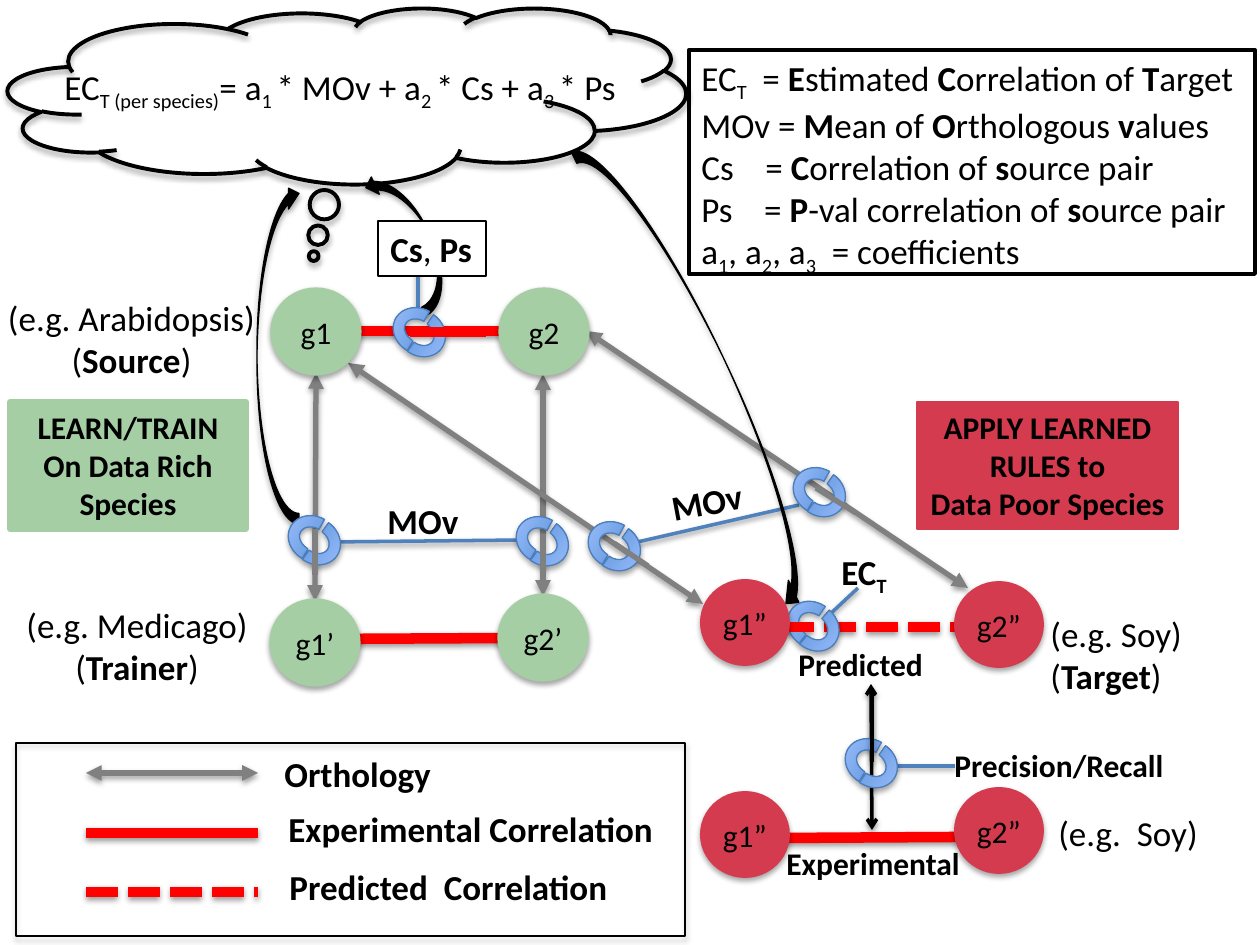
from lxml.etree import SubElement
from pptx import Presentation
from pptx.dml.color import RGBColor
from pptx.enum.dml import MSO_LINE
from pptx.enum.shapes import MSO_CONNECTOR, MSO_SHAPE
from pptx.enum.text import MSO_ANCHOR, MSO_AUTO_SIZE, PP_ALIGN
from pptx.oxml.ns import qn
from pptx.util import Pt

SCALE = 914400 / 126
GREEN, RED, BLACK, WHITE = "A5CEA5", "D53B4F", "000000", "FFFFFF"
ALIGN = {"l": PP_ALIGN.LEFT, "c": PP_ALIGN.CENTER}
NODE_W, NODE_H, RING_W, RING_H = 86, 83, 45, 52
NODE_LINES = {GREEN: 3, RED: 2.25}
LINKS = {
    "pointer": {"color": "4F81BD", "width": 2},
    "experimental": {"color": "FF0000", "width": 6},
    "predicted": {"color": "FF0000", "width": 6, "dash": MSO_LINE.SQUARE_DOT},
    "orthology": {"color": "808080", "width": 3, "head": "triangle"},
    "compare": {"color": BLACK, "width": 2, "head": "arrow"},
    "axis": {"color": BLACK, "width": 2.25},
    "red overlay": {"color": "FF0000", "width": 6, "shadow": False},
    "grey overlay": {"color": "808080", "width": 3, "shadow": False},
}

GLOSSARY = ["EC~T~  = ^E^stimated ^C^orrelation of ^T^arget",
            "MOv = ^M^ean of ^O^rthologous ^v^alues",
            "Cs    = ^C^orrelation of ^s^ource pair",
            "Ps    = ^P^-val correlation of ^s^ource pair",
            "a~1~, a~2~, a~3~  = coefficients"]
EQUATION = "EC~T (per species)~= a~1 ~* MOv + a~2 ~* Cs + a~3 ~* Ps "

ITEMS = [
    ("text", (-6, 290, 275, 97), ["(e.g. Arabidopsis)", "(^Source^)"], {"align": "c"}),
    ("link", "pointer", (895, 766, 955, 766)),
    ("link", "compare", (871, 684, 872, 830)),
    ("ring", 848, 736),
    ("link", "pointer", (827, 617, 858, 588)),
    ("link", "pointer", (418, 315, 418, 270)),
    ("link", "pointer", (633, 543, 799, 505)),
    ("link", "experimental", (321, 639, 510, 638)),
    ("link", "orthology", (316, 373, 315, 601)),
    ("link", "orthology", (543, 374, 543, 596)),
    ("link", "orthology", (586, 331, 968, 588)),
    ("text", (29, 59, 630, 55), [EQUATION], {"align": "c", "wrap": True}),
    ("link", "predicted", (782, 627, 975, 627)),
    ("link", "experimental", (774, 838, 958, 837)),
    ("text", (774, 838, 202, 50), ["^Experimental^"], {"size": 18}),
    ("text", (13, 597, 248, 97), ["(e.g. Medicago)", "(^Trainer^)"], {"align": "c"}),
    ("text", (1038, 606, 158, 97), ["(e.g. Soy)", "(^Target^)"], {}),
    ("text", (1046, 805, 166, 55), ["(e.g.  Soy)"], {}),
    ("shape", MSO_SHAPE.CLOUD_CALLOUT, (8, 8, 678, 176),
     {"width": 2.25, "adjust": (-0.049, 0.91)}),
    ("shape", MSO_SHAPE.CURVED_LEFT_ARROW, (679, 117, 49, 512), {"fill": BLACK, "rotation": 334.6}),
    ("box", (917, 402, 261, 127), ["^APPLY LEARNED RULES to^", "^Data Poor Species^"],
     {"fill": RED, "line": RED}, {"size": 18, "align": "c", "wrap": True}),
    ("shape", MSO_SHAPE.CURVED_LEFT_ARROW, (257, 183, 42, 341), {"fill": BLACK, "flip": "HV"}),
    ("shape", MSO_SHAPE.CURVED_LEFT_ARROW, (392, 164, 38, 151),
     {"fill": BLACK, "flip": "V", "rotation": 335}),
    ("link", "experimental", (358, 331, 501, 331)),
    ("link", "orthology", (258, 773, 86, 773)),
    ("link", "experimental", (86, 833, 258, 833)),
    ("link", "predicted", (86, 892, 258, 892)),
    ("shape", MSO_SHAPE.RECTANGLE, (16, 743, 669, 193), {}),
    ("text", (272, 746, 174, 55), ["^Orthology^"], {}),
    ("text", (276, 801, 394, 55), ["^Experimental Correlation^"], {}),
    ("text", (277, 859, 386, 55), ["^Predicted  Correlation^"], {"wrap": True}),
    ("box", (689, 50, 566, 224), GLOSSARY, {"width": 2.25}, {"wrap": True}),
    ("box", (10, 402, 236, 127), ["^LEARN/TRAIN^", "^On Data Rich^", "^Species^"],
     {"fill": GREEN, "line": GREEN, "width": 3}, {"size": 18, "align": "c", "wrap": True}),
    ("text", (786, 639, 152, 50), ["^Predicted^"], {"size": 18}),
    ("node", 702, 793, "g1”", RED),
    ("node", 272, 601, "g1’", GREEN),
    ("node", 500, 596, "g2’", GREEN),
    ("node", 956, 789, "g2”", RED),
    ("node", 956, 583, "g2”", RED),
    ("ring", 396, 305),
    ("link", "red overlay", (410, 332, 486, 332)),
    ("node", 501, 290, "g2", GREEN),
    ("box", (378, 221, 108, 55), ["^Cs^, ^Ps^"], {"fill": WHITE}, {}),
    ("text", (659, 474, 97, 55), ["^MOv^"], {"rotation": 349.4}),
    ("text", (942, 740, 238, 50), ["^Precision/Recall^"], {"size": 18}),
    ("ring", 796, 465),
    ("link", "grey overlay", (816, 488, 856, 513)),
    ("text", (829, 544, 73, 55), ["^EC~T~^"], {}),
    ("ring", 790, 599, 305),
    ("link", "red overlay", (785, 627, 810, 627)),
    ("link", "orthology", (348, 363, 703, 604)),
    ("ring", 591, 519),
    ("link", "grey overlay", (614, 543, 648, 566)),
    ("link", "pointer", (330, 542, 524, 540)),
    ("text", (375, 493, 97, 55), ["^MOv^"], {}),
    ("ring", 519, 514),
    ("ring", 291, 513),
    ("link", "grey overlay", (315, 529, 315, 575)),
    ("link", "grey overlay", (543, 534, 543, 578)),
    ("link", "axis", (872, 694, 872, 762)),
    ("node", 702, 581, "g1”", RED),
    ("node", 273, 290, "g1", GREEN),
]


def px(n):
    return round(n * SCALE)


def rgb(code):
    return RGBColor.from_string(code)


def put(obj, **fmt):
    for name, value in fmt.items():
        setattr(obj, name, value)


def shade(effects, dist, alpha):
    shadow = SubElement(effects, qn("a:outerShdw"), blurRad="40000", dist=str(dist),
                        dir="5400000", rotWithShape="0")
    color = SubElement(shadow, qn("a:srgbClr"), val=BLACK)
    SubElement(color, qn("a:alpha"), val=str(alpha))


def write(s, lines, size=20, align="l", wrap=False, anchor=MSO_ANCHOR.TOP,
          auto=MSO_AUTO_SIZE.SHAPE_TO_FIT_TEXT):
    tf = s.text_frame
    put(tf, word_wrap=wrap, vertical_anchor=anchor, auto_size=auto)
    bold = sub = False
    for i, line in enumerate(lines):
        p = tf.paragraphs[0] if i == 0 else tf.add_paragraph()
        p.alignment = ALIGN[align]
        for j, strong in enumerate(line.split("^")):
            bold = j % 2 == 1
            for k, part in enumerate(strong.split("~")):
                sub = k % 2 == 1
                if part:
                    r = p.add_run()
                    r.text = part
                    put(r.font, name="Calibri", size=Pt(size), bold=bold)
                    r.font.color.rgb = rgb(BLACK)
                    if sub:
                        r.font._element.set("baseline", "-25000")


def add_text(shapes, box, lines, fmt):
    s = shapes.add_textbox(*map(px, box))
    fmt = dict(fmt)
    s.rotation = fmt.pop("rotation", 0)
    write(s, lines, **fmt)


def add_shape(shapes, kind, box, fmt, shadow=True):
    s = shapes.add_shape(kind, *map(px, box))
    s.shadow.inherit = False
    s.rotation = fmt.get("rotation", 0)
    for i, value in enumerate(fmt.get("adjust", ())):
        s.adjustments[i] = value
    for axis in fmt.get("flip", ""):
        s._element.spPr.xfrm.set("flip" + axis, "1")
    if "fill" in fmt:
        s.fill.solid()
        s.fill.fore_color.rgb = rgb(fmt["fill"])
    else:
        s.fill.background()
    s.line.color.rgb = rgb(fmt.get("line", BLACK))
    s.line.width = Pt(fmt.get("width", 0.75))
    if shadow:
        shade(s._element.spPr.find(qn("a:effectLst")), 23000, 35000)
    return s


def add_box(shapes, box, lines, fmt, text):
    write(add_shape(shapes, MSO_SHAPE.RECTANGLE, box, fmt, shadow=False), lines, **text)


def add_node(shapes, x, y, label, color):
    s = add_shape(shapes, MSO_SHAPE.OVAL, (x, y, NODE_W, NODE_H),
                  {"fill": color, "line": color, "width": NODE_LINES[color]})
    write(s, [label], 18, "c", anchor=MSO_ANCHOR.MIDDLE, auto=MSO_AUTO_SIZE.NONE)


def add_ring(shapes, x, y, turn=299.3):
    for shift, angle in ((0, turn), (2, (turn + 186.1) % 360)):
        s = add_shape(shapes, MSO_SHAPE.BLOCK_ARC, (x + shift, y + shift, RING_W, RING_H),
                      {"line": "4B7EBC", "rotation": angle})
        s.fill.gradient()
        s.fill.gradient_angle = 90
        for stop, position, color in zip(s.fill.gradient_stops, (0, 1), ("3F80CE", "A4C4FF")):
            stop.position = position
            stop.color.rgb = rgb(color)


def add_link(shapes, style, ends):
    fmt = LINKS[style]
    s = shapes.add_connector(MSO_CONNECTOR.STRAIGHT, *map(px, ends))
    s.line.color.rgb = rgb(fmt["color"])
    put(s.line, width=Pt(fmt["width"]), dash_style=fmt.get("dash"))
    if "head" in fmt:
        for end in ("a:headEnd", "a:tailEnd"):
            SubElement(s.line._get_or_add_ln(), qn(end), type=fmt["head"])
    effects = SubElement(s._element.spPr, qn("a:effectLst"))
    if fmt.get("shadow", True):
        shade(effects, 20000, 38000)


def main():
    """Build the gene correlation transfer slide."""
    prs = Presentation()
    put(prs, slide_width=px(1260), slide_height=px(945))
    shapes = prs.slides.add_slide(prs.slide_layouts[6]).shapes
    adders = {"text": add_text, "shape": add_shape, "box": add_box,
              "node": add_node, "ring": add_ring, "link": add_link}
    for kind, *args in ITEMS:
        adders[kind](shapes, *args)
    prs.save("out.pptx")


if __name__ == "__main__":
    main()
